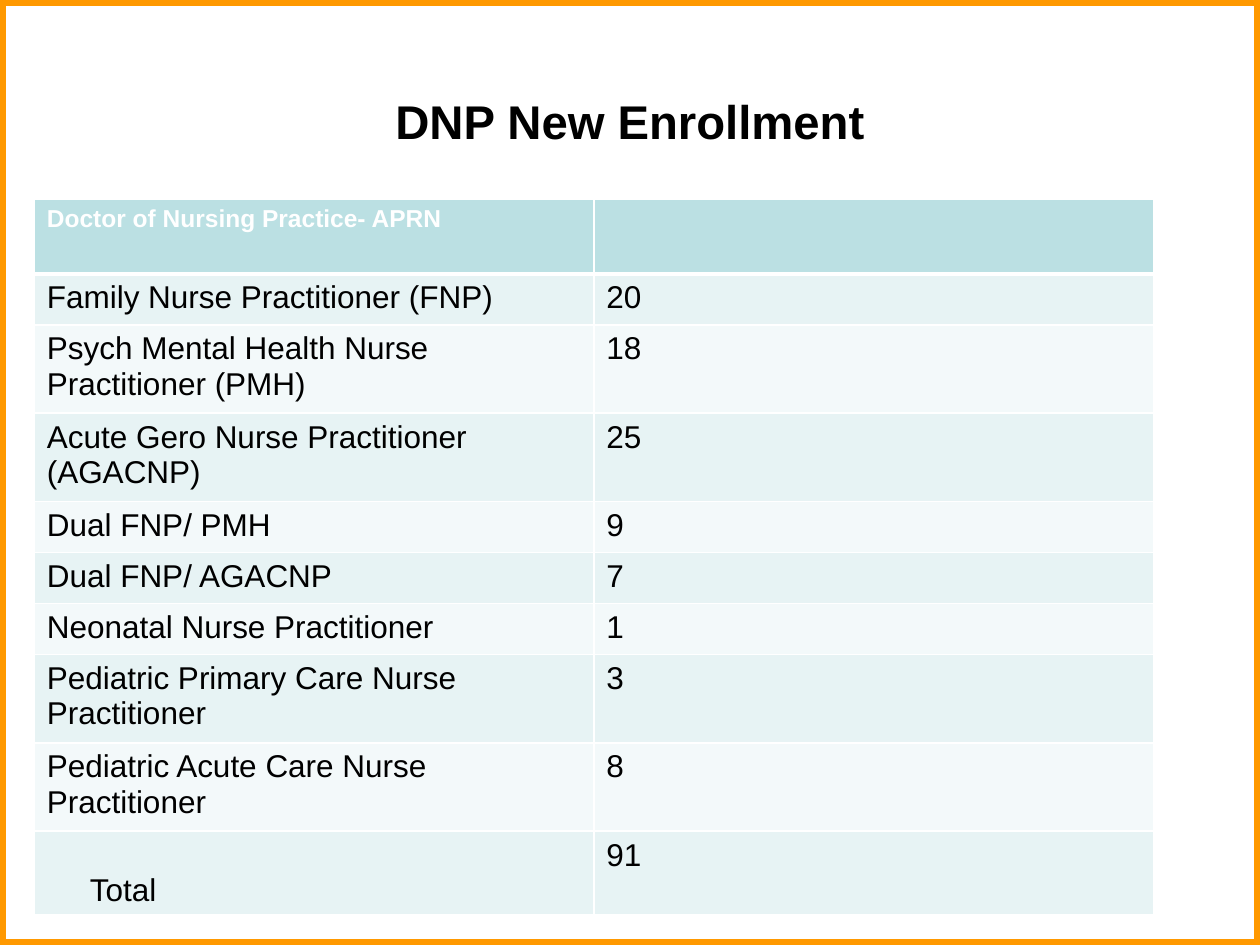
import pptx
import pptx.util
import pptx.dml.color
import pptx.enum.shapes
import pptx.enum.text
import lxml.etree
from dataclasses import dataclass

Cm = pptx.util.Cm
Pt = pptx.util.Pt
RGB = pptx.dml.color.RGBColor.from_string
Align = pptx.enum.text.PP_ALIGN
Anchor = pptx.enum.text.MSO_ANCHOR


@dataclass
class Theme:
    font: str = "Arial"
    ink: str = "000000"
    white: str = "FFFFFF"
    frame: str = "FF9900"
    head: str = "BBE0E3"
    bands: tuple = ("E7F3F4", "F3F9FA")
    title: int = 27
    label: int = 14
    body: int = 18


theme = Theme()


def write(frame, text, size=theme.body, color=theme.ink, bold=False, align=Align.LEFT):
    para = frame.paragraphs[0]
    para.alignment = align
    run = para.add_run()
    run.text = text
    run.font.name = theme.font
    run.font.size = Pt(size)
    run.font.bold = bold
    run.font.color.rgb = RGB(color)


def edge(cell, side, width):
    space = "{http://schemas.openxmlformats.org/drawingml/2006/main}"
    props = cell._tc.get_or_add_tcPr()
    line = lxml.etree.SubElement(props, space + side, w=str(Pt(width)))
    fill = lxml.etree.SubElement(line, space + "solidFill")
    lxml.etree.SubElement(fill, space + "srgbClr", val=theme.white)


deck = pptx.Presentation()
deck.slide_width = Cm(25.4)
deck.slide_height = Cm(19.05)
slide = deck.slides.add_slide(deck.slide_layouts[6])
slide.background.fill.solid()
slide.background.fill.fore_color.rgb = RGB(theme.white)

border = slide.shapes.add_shape(
    pptx.enum.shapes.MSO_SHAPE.RECTANGLE, 0, 0, deck.slide_width, deck.slide_height
)
border.shadow.inherit = False
border.fill.background()
border.line.color.rgb = RGB(theme.frame)
border.line.width = Pt(6.5)

title = slide.shapes.add_textbox(Cm(1.27), Cm(0.84), Cm(22.86), Cm(3.18)).text_frame
title.word_wrap = True
title.vertical_anchor = Anchor.MIDDLE
write(title, "DNP New Enrollment", size=theme.title, bold=True, align=Align.CENTER)

short, tall = 1.03, 1.68
rows = [
    ("Doctor of Nursing Practice- APRN", "", 1.5),
    ("Family Nurse Practitioner (FNP)", "20", short),
    ("Psych Mental Health Nurse Practitioner (PMH)", "18", tall),
    ("Acute Gero Nurse Practitioner (AGACNP)", "25", tall),
    ("Dual FNP/ PMH", "9", short),
    ("Dual FNP/ AGACNP", "7", short),
    ("Neonatal Nurse Practitioner", "1", short),
    ("Pediatric Primary Care Nurse Practitioner", "3", tall),
    ("Pediatric Acute Care Nurse Practitioner", "8", tall),
    ("Total", "91", tall),
]
height = sum(row[2] for row in rows)
table = slide.shapes.add_table(
    len(rows), 2, Cm(0.69), Cm(4.02), Cm(22.56), Cm(height)
).table
table.horz_banding = False

for i, (name, count, tall_by) in enumerate(rows):
    table.rows[i].height = Cm(tall_by)
    for j, text in enumerate((name, count)):
        cell = table.cell(i, j)
        edge(cell, "lnL", 1)
        edge(cell, "lnR", 1)
        edge(cell, "lnT", 3 if i == 1 else 1)
        edge(cell, "lnB", 3 if i == 0 else 1)
        cell.fill.solid()
        cell.fill.fore_color.rgb = RGB(theme.bands[(i - 1) % 2] if i else theme.head)
        if text and i:
            write(cell.text_frame, text)
        elif text:
            write(cell.text_frame, text, size=theme.label, color=theme.white, bold=True)

total = table.cell(len(rows) - 1, 0)
total.vertical_anchor = Anchor.BOTTOM
total.margin_left = Cm(1.12)

deck.save("out.pptx")
